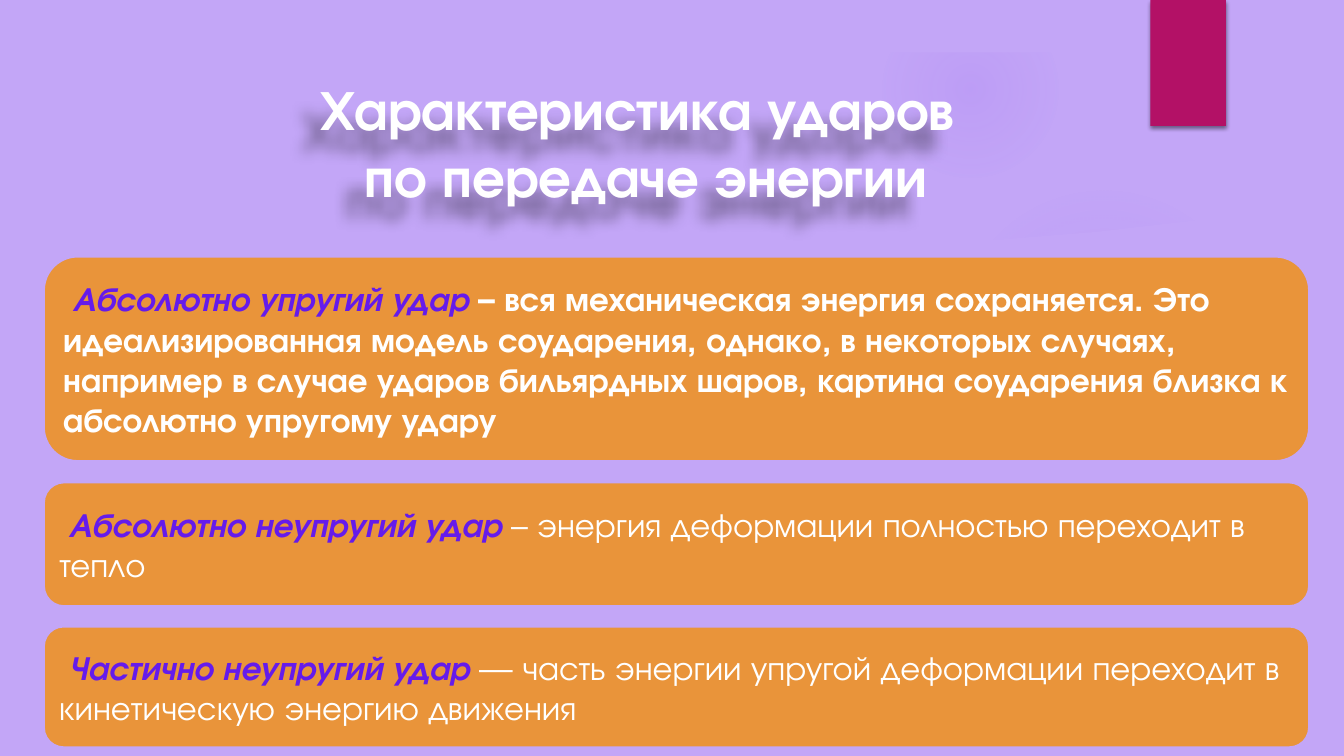
"""Build a slide on how impacts differ in energy transfer."""
from lxml import etree
from pptx import Presentation
from pptx.dml import color as dml
from pptx.enum import shapes, text
from pptx.oxml import ns
from pptx.util import Inches, Pt

FONT = "TeX Gyre Adventor"
LILAC, GLOW, ORANGE = "C3A6F7", "9B6BF2", "E9943A"
VIOLET, WHITE, CRIMSON, BLACK = "651BEB", "FFFFFF", "B31166", "000000"
CARDS = [
    (2.54, 2.04, "Абсолютно упругий удар ",
     "– вся механическая энергия сохраняется. Это идеализированная модель "
     "соударения, однако, в некоторых случаях, например в случае ударов "
     "бильярдных шаров, картина соударения близка к абсолютно упругому удару",
     True),
    (4.78, 1.24, "Абсолютно неупругий удар ",
     "– энергия деформации полностью переходит в тепло", False),
    (6.21, 1.21, "Частично неупругий удар ",
     "— часть энергии упругой деформации переходит в кинетическую энергию "
     "движения", False),
]
GLOWS = [
    (9.41, 1.83, 3.08, [(0, 7), (36, 6), (69, 0)]),
    (8.75, 0.01, 1.75, [(0, 14), (36, 7), (73, 0)]),
]
CURVE = [(0.5, 2.04), (1.59, 2.18), (2.83, 2.3), (4.44, 2.41), (6.07, 2.47),
         (7.34, 2.48), (8.67, 2.45), (9.76, 2.39), (10.88, 2.3),
         (12, 2.17), (12.84, 2.04), (12.84, 7), (0.5, 7)]


def rgb(code):
    """Return the colour for a hex string."""
    return dml.RGBColor.from_string(code)


def node(parent, tag, **attrs):
    """Add a drawing element with its attributes."""
    item = etree.SubElement(parent, ns.qn("a:" + tag))
    for key, value in attrs.items():
        item.set(key, str(value))
    return item


def tint(parent, code, alpha):
    """Add a colour with an opacity in percent."""
    node(node(parent, "srgbClr", val=code), "alpha", val=alpha * 1000)


def paint(shape, code):
    """Give a shape a plain fill with no line or shadow."""
    shape.shadow.inherit = False
    shape.fill.solid()
    shape.fill.fore_color.rgb = rgb(code)
    shape.line.fill.background()


def block(slide, kind, box, code):
    """Add a plain preset shape."""
    shape = slide.shapes.add_shape(kind, *map(Inches, box))
    paint(shape, code)
    return shape


def shade(shape, alpha, blur, dist, angle):
    """Cast a soft outer shadow, with lengths in points."""
    shape.shadow.inherit = False
    effects = shape._element.spPr.find(ns.qn("a:effectLst"))
    outer = node(effects, "outerShdw", blurRad=Pt(blur), dist=Pt(dist),
                 dir=angle * 60000, algn="ctr", rotWithShape=0)
    tint(outer, BLACK, alpha)


def glow(slide, left, top, size, stops):
    """Add a round glow that fades outwards."""
    shape = block(slide, shapes.MSO_SHAPE.OVAL, (left, top, size, size), GLOW)
    props = shape._element.spPr
    solid = props.find(ns.qn("a:solidFill"))
    grad = node(props, "gradFill", rotWithShape=1)
    props.replace(solid, grad)
    steps = node(grad, "gsLst")
    for place, alpha in stops:
        tint(node(steps, "gs", pos=place * 1000), GLOW, alpha)
    node(node(grad, "path", path="circle"), "fillToRect",
         l=50000, t=50000, r=50000, b=50000)


def panel(slide, points):
    """Add the backdrop with a curved top edge."""
    (left, top), *rest = points
    form = slide.shapes.build_freeform(Inches(left), Inches(top))
    form.add_line_segments([(Inches(x), Inches(y)) for x, y in rest])
    paint(form.convert_to_shape(), LILAC)


def write(para, words, size, code, bold=True, slant=False):
    """Add one run of text."""
    run = para.add_run()
    run.text = words
    font = run.font
    font.name, font.size = FONT, Pt(size)
    font.bold, font.italic = bold, slant
    font.color.rgb = rgb(code)


def card(slide, top, height, term, words, bold):
    """Add a rounded card with a term and its meaning."""
    shape = block(slide, shapes.MSO_SHAPE.ROUNDED_RECTANGLE,
                  (0.43, top, 12.56, height), ORANGE)
    shape.line.color.rgb = rgb(LILAC)
    shape.line.width = Pt(2.25)
    frame = shape.text_frame
    frame.word_wrap = True
    frame.vertical_anchor = text.MSO_ANCHOR.MIDDLE
    para = frame.paragraphs[0]
    para.alignment = text.PP_ALIGN.LEFT
    write(para, " ", 24, LILAC, slant=True)
    write(para, term, 24, VIOLET, slant=True)
    write(para, words, 24, WHITE, bold)


def title(slide):
    """Add the two-line heading with its shadow."""
    box = slide.shapes.add_textbox(*map(Inches, (0.74, 0.84, 11.33, 1.13)))
    frame = box.text_frame
    frame.word_wrap = True
    frame.vertical_anchor = text.MSO_ANCHOR.MIDDLE
    para = frame.paragraphs[0]
    para.alignment = text.PP_ALIGN.CENTER
    write(para, "Характеристика ударов ", 40, WHITE)
    para.add_line_break()
    write(para, "по передаче энергии", 40, WHITE)
    shade(box, 40, 10, 20, 135)


def main():
    """Build and save the slide."""
    deck = Presentation()
    deck.slide_width, deck.slide_height = Inches(13.33), Inches(7.5)
    slide = deck.slides.add_slide(deck.slide_layouts[6])
    back = slide.background.fill
    back.solid()
    back.fore_color.rgb = rgb(LILAC)
    for item in GLOWS:
        glow(slide, *item)
    panel(slide, CURVE)
    rect = shapes.MSO_SHAPE.RECTANGLE
    block(slide, rect, (0, 0, 13.33, 0.52), LILAC)
    shade(block(slide, rect, (11.41, 0, 0.75, 1.25), CRIMSON), 45, 3, 2, 90)
    for item in CARDS:
        card(slide, *item)
    title(slide)
    deck.save("out.pptx")


if __name__ == "__main__":
    main()
